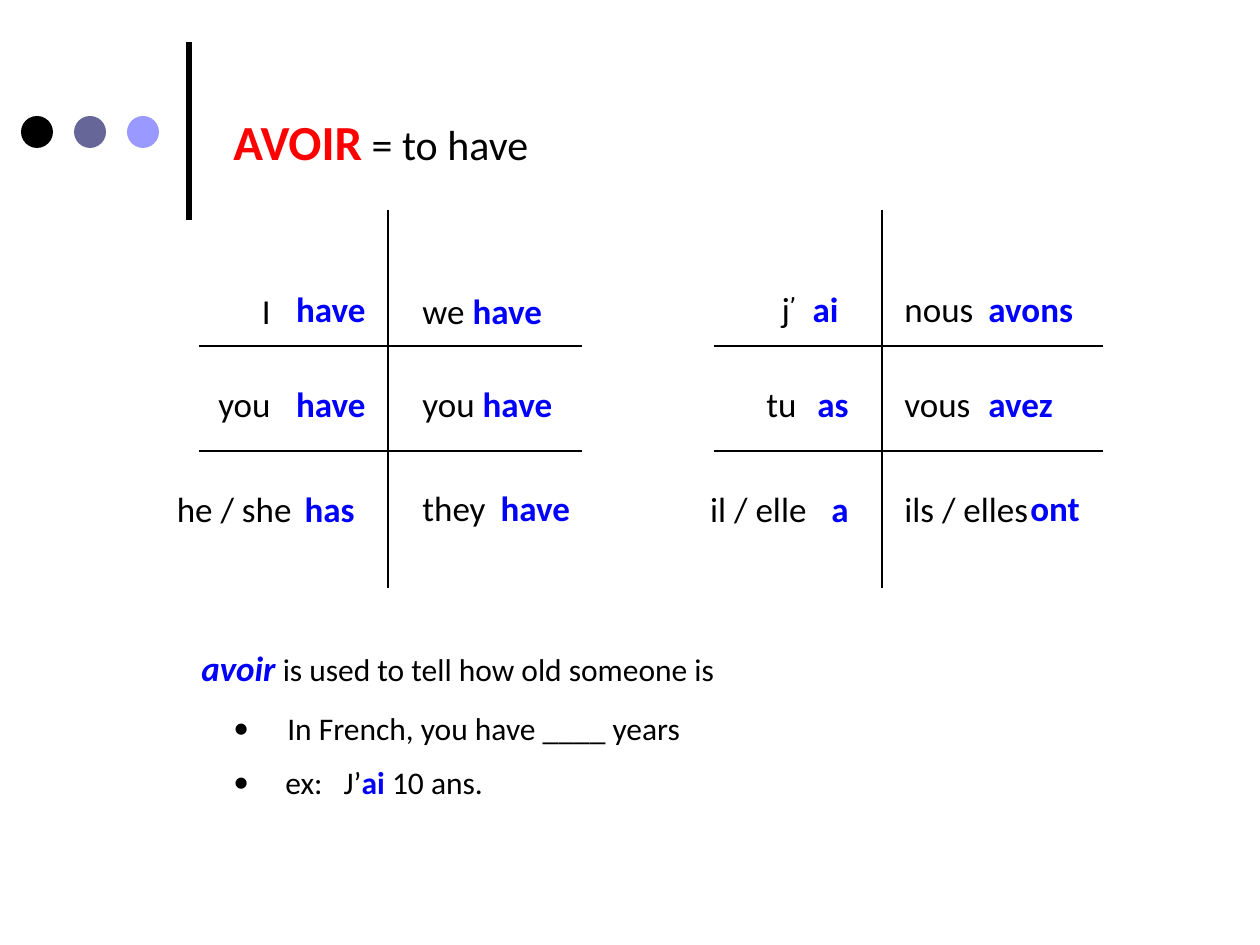
from pptx import Presentation
from pptx import util as u
from pptx.dml.color import RGBColor
from pptx.enum import shapes, text
from lxml import etree

PX = 914400 / 126
A = "{http://schemas.openxmlformats.org/drawingml/2006/main}"
theme = {
    "dots": ("000000", "666699", "9999FF"),
    "line": "000000",
    "title": (28, "FF0000", True, False, "Calibri"),
    "meaning": (24, "000000", False, False, "Calibri"),
    "word": (20, "000000", False, False, "Calibri"),
    "mark": (20, "000000", False, False, "Comic Neue"),
    "verb": (20, "0000FF", True, False, "Calibri"),
    "lead": (20, "0000FF", True, True, "Calibri"),
    "note": (18, "000000", False, False, "Calibri"),
    "key": (18, "0000FF", True, False, "Calibri"),
}

prs = Presentation()
prs.slide_width, prs.slide_height = u.Emu(round(1260 * PX)), u.Emu(round(945 * PX))
s = prs.slides.add_slide(prs.slide_layouts[6])


def add_line(x1, y1, x2, y2, width=0.75):
    ends = [u.Emu(round(v * PX)) for v in (x1, y1, x2, y2)]
    sp = s.shapes.add_connector(shapes.MSO_CONNECTOR.STRAIGHT, *ends)
    sp.line.color.rgb = RGBColor.from_string(theme["line"])
    sp.line.width = u.Pt(width)
    etree.SubElement(sp._element.spPr, A + "effectLst")


def add_text(x, y, w, h, paragraphs, align="LEFT"):
    box = [u.Emu(round(v * PX)) for v in (x, y, w, h)]
    tf = s.shapes.add_textbox(*box).text_frame
    tf.word_wrap = True
    for i, runs in enumerate(paragraphs):
        p = tf.paragraphs[0] if i == 0 else tf.add_paragraph()
        p.alignment = getattr(text.PP_ALIGN, align)
        for words, style, *gap in runs:
            r = p.add_run()
            r.text = words
            size, color, r.font.bold, r.font.italic, r.font.name = theme[style]
            r.font.size = u.Pt(size)
            r.font.color.rgb = RGBColor.from_string(color)
            if gap:
                r._r.get_or_add_rPr().set("spc", str(gap[0] * 100))
    return tf


add_line(189, 220, 189, 42, 3)
for i, color in enumerate(theme["dots"]):
    dot = [u.Emu(round(v * PX)) for v in (21 + 53 * i, 116, 32, 32)]
    sp = s.shapes.add_shape(shapes.MSO_SHAPE.OVAL, *dot)
    sp.shadow.inherit = False
    sp.fill.solid()
    sp.fill.fore_color.rgb = RGBColor.from_string(color)
    sp.line.fill.background()

add_text(221, 105, 882, 72, [[("AVOIR", "title"), (" ", "meaning"), ("= to have", "meaning")]])

for left, middle, right in ((199, 388, 582), (714, 882, 1103)):
    add_line(middle, 210, middle, 588)
    for y in (346, 451):
        add_line(left, y, right, y)

right_aligned = [
    (220, 283, 63, [("I", "word")]),
    (199, 376, 84, [("you", "word")]),
    (136, 481, 168, [("he / she", "word")]),
    (262, 281, 116, [("have", "verb")]),
    (273, 376, 105, [("have", "verb")]),
    (283, 481, 84, [("has", "verb")]),
    (746, 281, 63, [("j", "word"), ("’", "mark")]),
    (746, 376, 63, [("tu", "word")]),
    (651, 481, 168, [("il / elle", "word")]),
    (788, 281, 63, [("ai", "verb")]),
    (798, 376, 63, [("as", "verb")]),
    (798, 481, 63, [("a", "verb")]),
]
left_aligned = [
    (410, 283, 174, [("we ", "word"), ("have", "verb")]),
    (410, 376, 174, [("you ", "word"), ("have", "verb")]),
    (410, 480, 210, [("they", "word"), (" ", "word", 4), ("have", "verb")]),
    (892, 281, 126, [("nous", "word")]),
    (892, 376, 126, [("vous", "word")]),
    (892, 481, 189, [("ils / elles", "word")]),
    (976, 281, 179, [("avons", "verb")]),
    (976, 376, 179, [("avez", "verb")]),
    (1018, 480, 179, [("ont", "verb")]),
]
for align, entries in (("RIGHT", right_aligned), ("LEFT", left_aligned)):
    for x, y, w, runs in entries:
        add_text(x, y, w, 54, [runs], align)

tf = add_text(189, 640, 872, 183, [
    [("avoir", "lead"), (" ", "key"), ("is used to tell how old someone is", "note")],
    [("In French, you have ____ years", "note")],
    [("ex:", "note"), (" ", "note", 8), ("J’", "note"), ("ai ", "key"), ("10 ans.", "note")],
])
for p, before, margin, bullet_size in zip(tf.paragraphs[1:], (12, 9), (86, 84), (20, 18)):
    p.space_before = u.Pt(before)
    pPr = p._p.get_or_add_pPr()
    pPr.set("marL", str(round(margin * PX)))
    pPr.set("indent", str(round((32 - margin) * PX)))
    etree.SubElement(pPr, A + "buSzPts", val=str(bullet_size * 100))
    etree.SubElement(pPr, A + "buFont", typeface="Calibri")
    etree.SubElement(pPr, A + "buChar", char="•")

prs.save("out.pptx")
